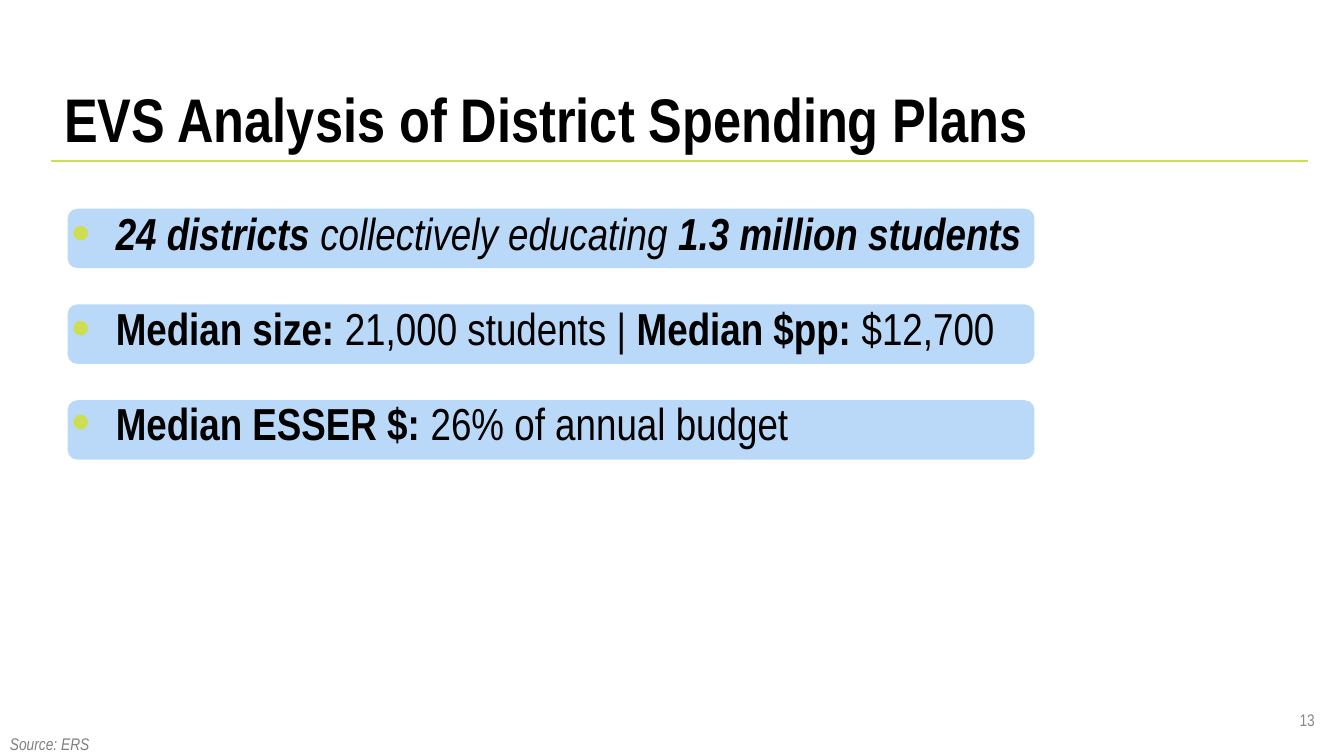
"""Build the slide on the analysis of district spending plans."""
from dataclasses import dataclass

from lxml.etree import SubElement
from pptx import Presentation
from pptx.dml.color import RGBColor
from pptx.enum.shapes import MSO_CONNECTOR, MSO_SHAPE
from pptx.enum.text import MSO_ANCHOR, PP_ALIGN
from pptx.oxml.ns import qn
from pptx.util import Inches, Pt


@dataclass(frozen=True)
class Theme:
    """Hold the colours, font and type sizes of the slide."""
    font: str = "Arial Narrow"
    ink: str = "000000"
    accent: str = "CEDE53"
    band: str = "BAD8F8"
    number: str = "888888"
    source: str = "7F7F7F"
    title_size: int = 44
    body_size: int = 32
    small_size: int = 12


THEME = Theme()
BAND_TOP, BAND_PITCH = 2.07, 0.95
FINDINGS = [
    (True, [("24 districts ", True), ("collectively educating ", False),
            ("1.3 million students", True)]),
    (False, [("Median size: ", True), ("21,000 students | ", False),
             ("Median $pp: ", True), ("$12,700", False)]),
    (False, [("Median ESSER $: ", True), ("26% of annual budget", False)]),
]


def style_font(font, size, color, bold=False, italic=False):
    """Apply the theme font with the given size, colour and emphasis."""
    font.name = THEME.font
    font.size = Pt(size)
    font.color.rgb = RGBColor.from_string(color)
    font.bold = bold
    font.italic = italic


def add_frame(slide, left, top, width, height, anchor=MSO_ANCHOR.TOP):
    """Add a wrapping text box and return its text frame."""
    frame = slide.shapes.add_textbox(
        Inches(left), Inches(top), Inches(width), Inches(height)).text_frame
    frame.word_wrap = True
    frame.vertical_anchor = anchor
    return frame


def fill_line(frame, text, size, color, spacing=1.0, align=PP_ALIGN.LEFT, **emphasis):
    """Write one styled paragraph into a text frame."""
    frame.text = text
    paragraph = frame.paragraphs[0]
    paragraph.line_spacing = spacing
    paragraph.alignment = align
    style_font(paragraph.runs[0].font, size, color, **emphasis)


def add_rule(slide, left, right, y):
    """Draw the accent rule under the title."""
    rule = slide.shapes.add_connector(
        MSO_CONNECTOR.STRAIGHT, Inches(left), Inches(y), Inches(right), Inches(y))
    rule.line.color.rgb = RGBColor.from_string(THEME.accent)
    rule.line.width = Pt(1.5)
    SubElement(rule._element.spPr, qn("a:effectLst"))


def add_band(slide, top):
    """Draw one rounded highlight band behind a finding."""
    band = slide.shapes.add_shape(
        MSO_SHAPE.ROUNDED_RECTANGLE, Inches(0.67), Inches(top), Inches(9.59), Inches(0.59))
    band.shadow.inherit = False
    band.fill.solid()
    band.fill.fore_color.rgb = RGBColor.from_string(THEME.band)
    band.line.fill.background()


def add_bullet(paragraph):
    """Give a paragraph a hanging accent-coloured bullet."""
    properties = paragraph._p.get_or_add_pPr()
    properties.set("marL", str(Inches(0.5)))
    properties.set("indent", str(Inches(-0.44)))
    color = SubElement(properties, qn("a:buClr"))
    SubElement(color, qn("a:srgbClr"), val=THEME.accent)
    SubElement(properties, qn("a:buSzPct"), val="120000")
    SubElement(properties, qn("a:buFont"), typeface="Arial")
    SubElement(properties, qn("a:buChar"), char="•")


def add_findings(slide):
    """Write the bulleted findings with their mixed emphasis."""
    frame = add_frame(slide, 0.55, 1.73, 12.43, 5.07)
    for index, (italic, parts) in enumerate(FINDINGS):
        paragraph = frame.add_paragraph() if index else frame.paragraphs[0]
        add_bullet(paragraph)
        paragraph.line_spacing = 1.5
        paragraph.space_before = Pt(10 if index else 0)
        for text, bold in parts:
            run = paragraph.add_run()
            run.text = text
            style_font(run.font, THEME.body_size, THEME.ink, bold, italic)


def main():
    """Assemble and save the slide."""
    deck = Presentation()
    deck.slide_width, deck.slide_height = Inches(13.33), Inches(7.5)
    slide = deck.slides.add_slide(deck.slide_layouts[6])

    add_rule(slide, 0.51, 12.97, 1.6)
    for index in range(len(FINDINGS)):
        add_band(slide, BAND_TOP + index * BAND_PITCH)

    title = add_frame(slide, 0.54, 0.14, 12.43, 1.45, MSO_ANCHOR.BOTTOM)
    fill_line(title, "EVS Analysis of District Spending Plans",
              THEME.title_size, THEME.ink, spacing=0.9, bold=True)
    add_findings(slide)

    page_number = add_frame(slide, 12.48, 6.94, 0.66, 0.4, MSO_ANCHOR.MIDDLE)
    fill_line(page_number, "13", THEME.small_size, THEME.number, align=PP_ALIGN.RIGHT)

    source = add_frame(slide, 0, 7.15, 8.2, 0.4)
    source.margin_top = source.margin_bottom = Inches(0.1)
    fill_line(source, "Source: ERS", THEME.small_size, THEME.source,
              spacing=1.15, italic=True)

    deck.save("out.pptx")


if __name__ == "__main__":
    main()
